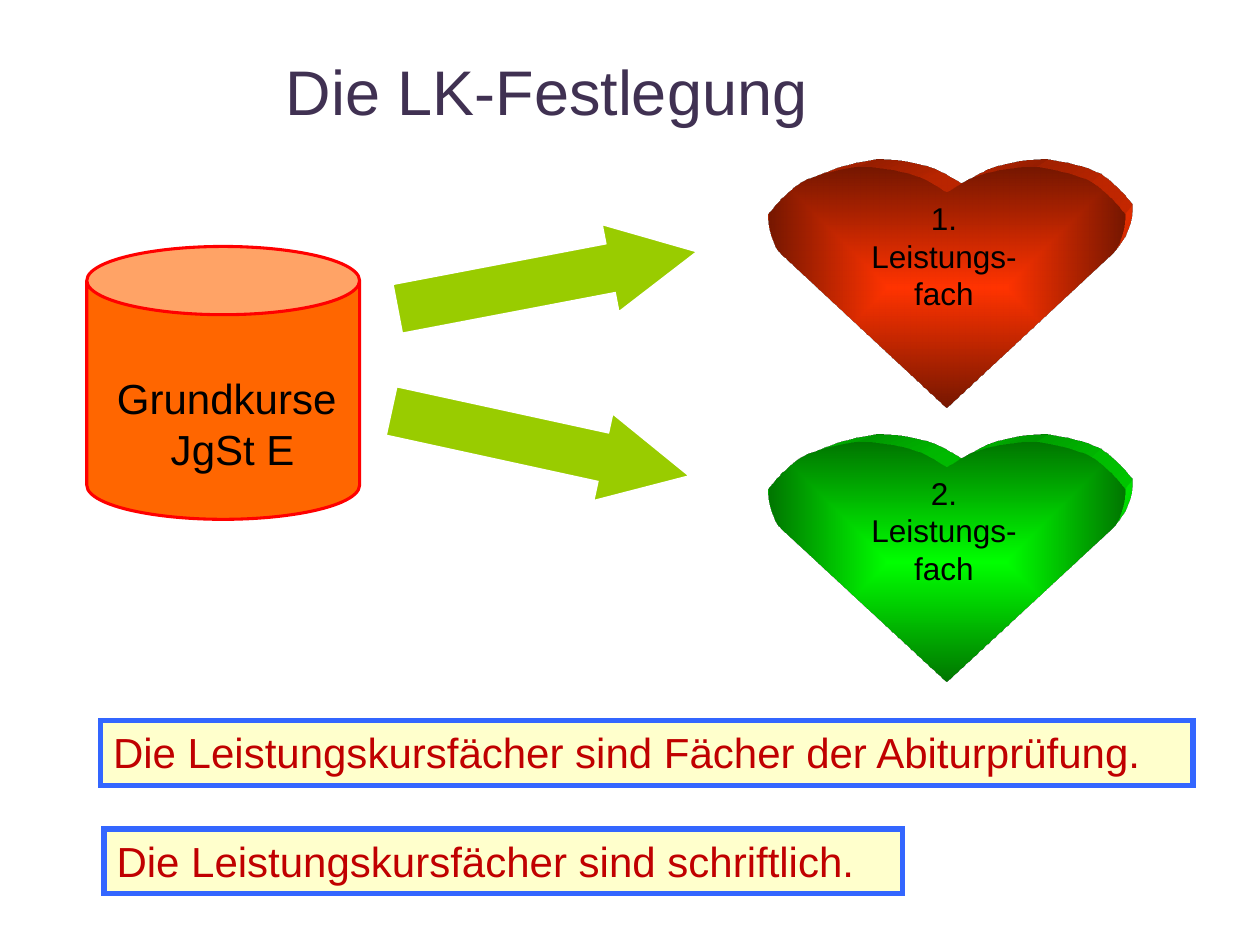
from dataclasses import dataclass

from lxml import etree
from pptx import Presentation
from pptx import util as u
from pptx.dml.color import RGBColor
from pptx.enum import shapes, text
from pptx.oxml.ns import qn

COLOURS = {
    "ink": "000000", "title": "403152", "statement": "C00000",
    "pale": "FFFFCC", "frame": "3366FF", "arrow": "99CC00", "white": "FFFFFF",
    "can": "FF6600", "can_line": "FF0000", "red": "FF3300", "green": "00FF00",
}

# Right half of a heart in cm, from the notch down, as Bézier segments
NOTCH, TIP = (0, 0.51), (0, 4.83)
HALF_HEART = [
    ((0.15, 0.41), (0.45, 0.23), (0.61, 0.18)),
    ((1.0, 0.05), (1.38, 0), (1.81, 0)),
    ((2.18, 0.05), (2.57, 0.13), (2.92, 0.3)),
    ((3.22, 0.51), (3.43, 0.74), (3.59, 0.94)),
    ((3.59, 1.22), (3.53, 1.47), (3.38, 1.7)),
]
HEART_MIDDLE, HALF_WIDTH = 19.08, 3.59


@dataclass
class Heart:
    top: float
    number: str
    fill: str


@dataclass
class Arrow:
    left: float
    top: float
    angle: float


@dataclass
class Statement:
    left: float
    top: float
    width: float
    wording: str


HEARTS = [Heart(3.38, "1.", "red"), Heart(8.92, "2.", "green")]
UPPER_ARROW = Arrow(7.96, 4.75, -10.8)
LOWER_ARROW = Arrow(7.82, 8.04, 12.3)
EXAM = Statement(2.03, 14.53, 22.02,
                 "Die Leistungskursfächer sind Fächer der Abiturprüfung.")
WRITTEN = Statement(2.1, 16.71, 16.1, "Die Leistungskursfächer sind schriftlich.")


def colour(name: str) -> RGBColor:
    return RGBColor.from_string(COLOURS[name])


def add_node(parent, tag: str, **attributes: str):
    return etree.SubElement(parent, qn(f"a:{tag}"), attributes)


def write(shape, lines: list[str], *, size: float, ink: str = "ink",
          align=text.PP_ALIGN.LEFT, wrap: bool = True) -> None:
    frame = shape.text_frame
    frame.word_wrap = wrap
    frame.vertical_anchor = text.MSO_ANCHOR.TOP
    for index, line in enumerate(lines):
        para = frame.add_paragraph() if index else frame.paragraphs[0]
        para.alignment = align
        span = para.add_run()
        span.text = line
        span.font.name = "Arial"
        span.font.size = u.Pt(size)
        span.font.color.rgb = colour(ink)


def paint(shape, fill: str, line: str | None = None, width: float = 1) -> None:
    shape.shadow.inherit = False
    shape.fill.solid()
    shape.fill.fore_color.rgb = colour(fill)
    if line:
        shape.line.color.rgb = colour(line)
        shape.line.width = u.Pt(width)
        add_node(shape.line._get_or_add_ln(), "miter", lim="800000")
    else:
        shape.line.fill.background()


def glow(shape, fill: str) -> None:
    """Gradient from the plain colour in the middle to a shade at the edge."""
    gradient = etree.Element(qn("a:gradFill"), rotWithShape="0")
    stops = add_node(gradient, "gsLst")
    add_node(add_node(stops, "gs", pos="0"), "srgbClr", val=COLOURS[fill])
    edge = add_node(add_node(stops, "gs", pos="100000"), "srgbClr", val=COLOURS[fill])
    add_node(edge, "gamma")
    add_node(edge, "shade", val="46275")
    add_node(edge, "invGamma")
    spread = add_node(gradient, "path", path="shape")
    add_node(spread, "fillToRect", **{side: "50000" for side in "ltrb"})
    solid = shape._element.spPr.find(qn("a:solidFill"))
    solid.getparent().replace(solid, gradient)


def extrude(shape, fill: str) -> None:
    """Depth towards the upper right."""
    properties = shape._element.spPr
    scene = add_node(properties, "scene3d")
    add_node(scene, "camera", prst="legacyPerspectiveTopRight")
    add_node(scene, "lightRig", rig="legacyFlat3", dir="b")
    solid = add_node(properties, "sp3d", extrusionH="430200",
                     prstMaterial="legacyMatte")
    add_node(add_node(solid, "extrusionClr"), "srgbClr", val=COLOURS[fill])


def mirror(point: tuple[float, float]) -> tuple[float, float]:
    return -point[0], point[1]


def add_heart(page, heart: Heart) -> None:
    # The left half runs back through the mirrored right half
    ends = [NOTCH] + [segment[2] for segment in HALF_HEART]
    left_half = [(mirror(second), mirror(first), mirror(start))
                 for start, (first, second, _) in zip(ends, HALF_HEART)][::-1]
    corners = ends + [TIP] + [mirror(end) for end in ends[:0:-1]]
    places = [(u.Cm(HEART_MIDDLE + x), u.Cm(heart.top + y)) for x, y in corners]
    builder = page.shapes.build_freeform(*places[0])
    builder.add_line_segments(places[1:], close=True)
    shape = builder.convert_to_shape()

    # Turn the straight sides of the lobes into curves
    outline = next(shape._element.iter(qn("a:path")))
    for node in list(outline):
        outline.remove(node)
    steps = [("moveTo", (NOTCH,)),
             *(("cubicBezTo", segment) for segment in HALF_HEART),
             ("lnTo", (TIP,)), ("lnTo", (mirror(ends[-1]),)),
             *(("cubicBezTo", segment) for segment in left_half)]
    for tag, points in steps:
        step = add_node(outline, tag)
        for x, y in points:
            add_node(step, "pt", x=str(u.Cm(HALF_WIDTH + x)), y=str(u.Cm(y)))
    add_node(outline, "close")

    paint(shape, heart.fill)
    glow(shape, heart.fill)
    extrude(shape, heart.fill)
    frame = shape.text_frame
    frame.margin_left, frame.margin_right = u.Cm(1.93), u.Cm(2.03)
    frame.margin_top = u.Cm(0.63)
    write(shape, [f"{heart.number} Leistungs-", "fach"], size=18,
          align=text.PP_ALIGN.CENTER)


def add_preset(page, kind, left: float, top: float, width: float, height: float):
    return page.shapes.add_shape(kind, u.Cm(left), u.Cm(top), u.Cm(width), u.Cm(height))


def add_arrow(page, arrow: Arrow) -> None:
    shape = add_preset(page, shapes.MSO_SHAPE.RIGHT_ARROW,
                       arrow.left, arrow.top, 6.15, 1.8)
    shape.adjustments[0], shape.adjustments[1] = 0.56, 0.99
    shape.rotation = arrow.angle
    paint(shape, "arrow", "white")


def add_statement(page, statement: Statement) -> None:
    shape = add_preset(page, shapes.MSO_SHAPE.RECTANGLE, statement.left,
                       statement.top, statement.width, 1.3)
    paint(shape, "pale", "frame", 3)
    write(shape, [statement.wording], size=24, ink="statement")


def main() -> None:
    deck = Presentation()
    deck.slide_width, deck.slide_height = u.Cm(25.4), u.Cm(19.05)
    page = deck.slides.add_slide(deck.slide_layouts[6])

    # Pool of basic courses
    can = add_preset(page, shapes.MSO_SHAPE.CAN, 1.75, 4.97, 5.5, 5.5)
    can.adjustments[0] = 0.25
    paint(can, "can", "can_line", 1.75)
    label = page.shapes.add_textbox(u.Cm(2.03), u.Cm(7.39), u.Cm(5.08), u.Cm(2.31))
    write(label, ["Grundkurse", "JgSt E"], size=24, align=text.PP_ALIGN.CENTER)
    second_line = label.text_frame.paragraphs[1]
    second_line._p.get_or_add_pPr().set("marL", str(u.Cm(0.24)))

    # Advanced courses and the way to them
    add_arrow(page, UPPER_ARROW)
    for heart in HEARTS:
        add_heart(page, heart)
    add_arrow(page, LOWER_ARROW)

    # Statements and title
    add_statement(page, EXAM)
    title = page.shapes.add_textbox(u.Cm(5.51), u.Cm(0.93), u.Cm(11.13), u.Cm(1.8))
    write(title, ["Die LK-Festlegung"], size=36, ink="title", wrap=False)
    add_statement(page, WRITTEN)

    deck.save("out.pptx")


if __name__ == "__main__":
    main()
